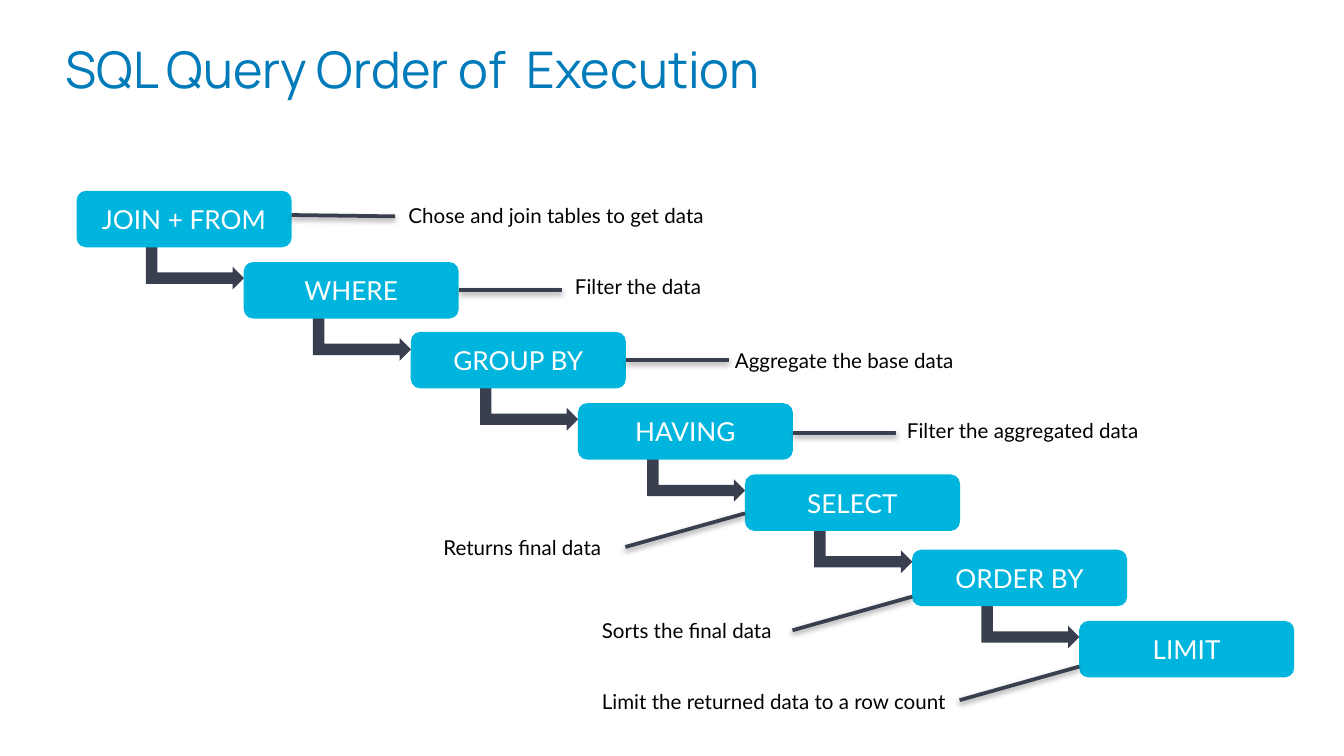
from lxml.etree import SubElement
from pptx import Presentation
from pptx.dml.color import RGBColor
from pptx.enum.shapes import MSO_CONNECTOR, MSO_SHAPE
from pptx.enum.text import MSO_ANCHOR, MSO_AUTO_SIZE, PP_ALIGN
from pptx.oxml.ns import qn
from pptx.util import Inches, Pt

CYAN, SLATE, BLUE, WHITE, BLACK = "00B5DD", "3A3F50", "007BB9", "FFFFFF", "000000"
STEP_WIDTH, STEP_HEIGHT = 1.6, 0.42
FIRST_LEFT, LAST_LEFT = 0.57, 8.03
ARROW_WIDTH, ARROW_HEIGHT = 0.34, 0.73

STEPS = [
    ("JOIN + FROM", 1.42, "Chose and join tables to get data", (2.94, 1.46, 2.95), (1.6, 1.6), (2.37, 1.61)),
    ("WHERE", 1.95, "Filter the data", (4.18, 1.99, 1.5), (1.6, 2.16), (2.37, 2.16)),
    ("GROUP BY", 2.47, "Aggregate the base data", (5.37, 2.54, 2), (1.6, 2.68), (2.37, 2.68)),
    ("HAVING", 3, "Filter the aggregated data", (6.65, 3.06, 2.8), (1.6, 3.22), (2.37, 3.22)),
    ("SELECT", 3.53, "Returns final data", (3.2, 3.93, 1.45), (-0.89, 4.07), (0, 3.82)),
    ("ORDER BY", 4.09, "Sorts the final data", (4.38, 4.55, 1.52), (-0.89, 4.69), (0, 4.44)),
    ("LIMIT", 4.62, "Limit the returned data to a row count", (4.38, 5.08, 2.76), (-0.89, 5.21), (0, 4.96)),
]


def color(value):
    """Turn a hex string into a colour."""
    return RGBColor.from_string(value)


def style_text(para, text, font, size, fill):
    """Write the text of a paragraph and set its font."""
    para.text = text
    para.font.name = font
    para.font.size = Pt(size)
    para.font.color.rgb = color(fill)


def add_block(page, kind, left, top, width, height, fill):
    """Add a flat filled shape without outline."""
    block = page.shapes.add_shape(kind, Inches(left), Inches(top), Inches(width), Inches(height))
    block.shadow.inherit = False
    block.fill.solid()
    block.fill.fore_color.rgb = color(fill)
    block.line.fill.background()
    return block


def add_title(page, left, top, width, height):
    """Add the slide title."""
    box = page.shapes.add_textbox(Inches(left), Inches(top), Inches(width), Inches(height))
    frame = box.text_frame
    frame.word_wrap = True
    frame.margin_left = frame.margin_right = frame.margin_top = frame.margin_bottom = 0
    para = frame.paragraphs[0]
    para.line_spacing = 0.8
    style_text(para, "SQL Query Order of  Execution", "Manrope", 27, BLUE)


def add_step(page, name, left, top):
    """Add one step of the staircase."""
    block = add_block(page, MSO_SHAPE.ROUNDED_RECTANGLE, left, top, STEP_WIDTH, STEP_HEIGHT, CYAN)
    block.text_frame.vertical_anchor = MSO_ANCHOR.MIDDLE
    para = block.text_frame.paragraphs[0]
    para.alignment = PP_ALIGN.CENTER
    style_text(para, name, "Lato", 14, WHITE)


def add_arrow(page, left, top):
    """Add the bent arrow that leads from a step to the next one."""
    arrow = add_block(page, MSO_SHAPE.BENT_UP_ARROW, left + 0.71, top + 0.2, ARROW_WIDTH, ARROW_HEIGHT, SLATE)
    arrow.rotation = 90


def add_note(page, text, left, top, width):
    """Add the explanation of a step."""
    box = page.shapes.add_textbox(Inches(left), Inches(top), Inches(width), Inches(0.29))
    box.text_frame.word_wrap = True
    box.text_frame.auto_size = MSO_AUTO_SIZE.SHAPE_TO_FIT_TEXT
    style_text(box.text_frame.paragraphs[0], text, "Lato", 11, BLACK)


def add_leader(page, left, start, end):
    """Add the softly shadowed line between a step and its note."""
    points = [Inches(value) for value in (left + start[0], start[1], left + end[0], end[1])]
    leader = page.shapes.add_connector(MSO_CONNECTOR.STRAIGHT, *points)
    leader.line.color.rgb = color(SLATE)
    leader.line.width = Pt(2)
    effects = SubElement(leader._element.spPr, qn("a:effectLst"))
    shadow = SubElement(effects, qn("a:outerShdw"), blurRad=str(Pt(3.1)), dist=str(Pt(1.6)),
                        dir="5400000", rotWithShape="0")
    tint = SubElement(shadow, qn("a:srgbClr"), val=BLACK)
    SubElement(tint, qn("a:alpha"), val="38000")


def add_staircase(page, first_left, last_left):
    """Add all steps with their arrows, notes and leaders."""
    pitch = (last_left - first_left) / (len(STEPS) - 1)
    for index, (name, top, note, note_box, start, end) in enumerate(STEPS):
        left = first_left + index * pitch
        if index < len(STEPS) - 1:
            add_arrow(page, left, top)
        add_step(page, name, left, top)
        add_note(page, note, *note_box)
        add_leader(page, left, start, end)


def main():
    """Build and save the deck."""
    deck = Presentation()
    deck.slide_width = Inches(10)
    deck.slide_height = deck.slide_width * 9 // 16
    page = deck.slides.add_slide(deck.slide_layouts[6])
    add_title(page, 0.49, 0.37, 6.17, 1.18)
    add_staircase(page, FIRST_LEFT, LAST_LEFT)
    deck.save("out.pptx")


if __name__ == "__main__":
    main()
